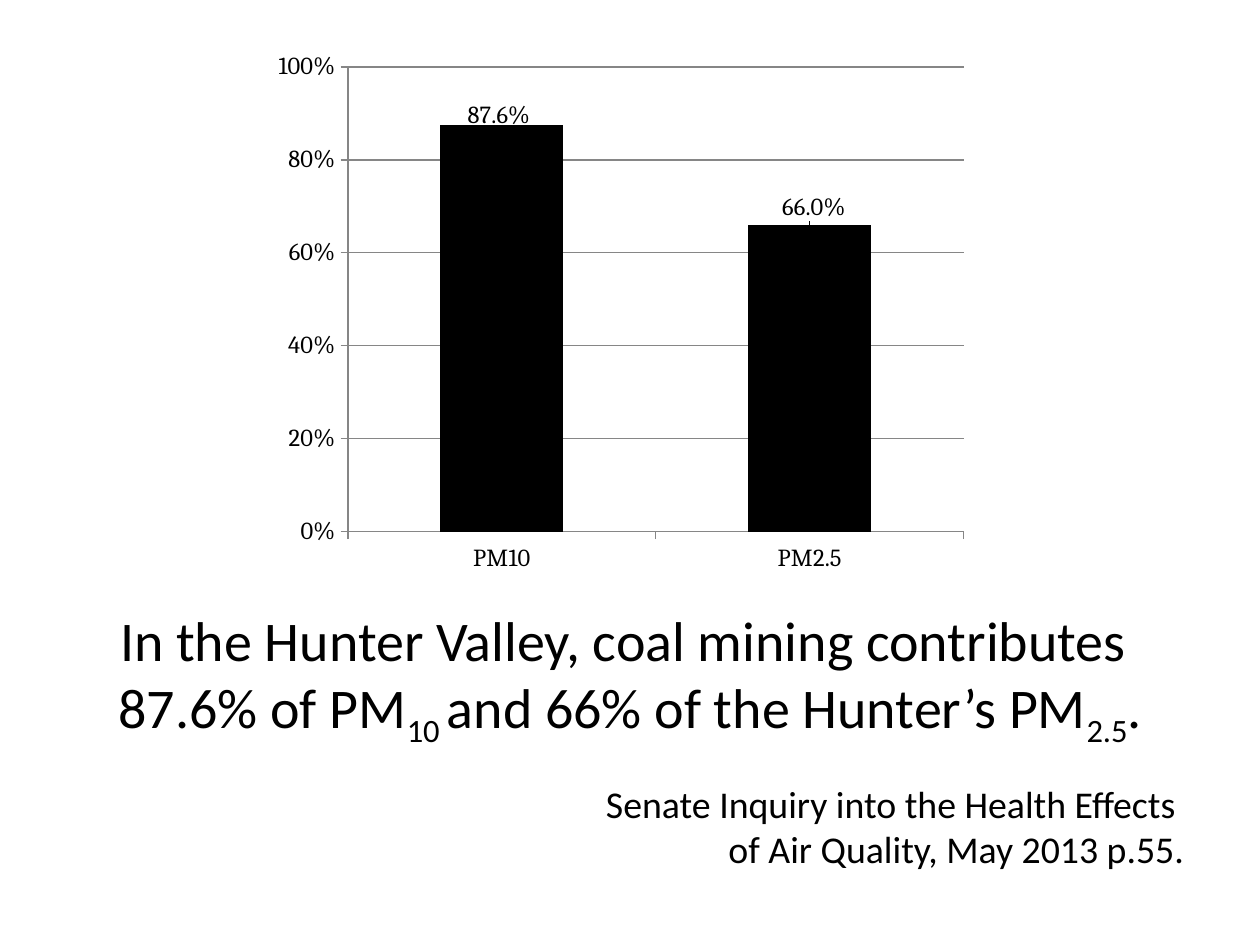
import pptx
import pptx.chart.data
import pptx.dml.color
import pptx.enum.chart
import pptx.enum.text
import pptx.oxml
import pptx.oxml.ns
import pptx.util

COLORS = {"ink": "000000", "axis": "868686", "paper": "FFFFFF"}
FONTS = {"body": "Calibri", "chart": "Cambria"}
SHARES = {"PM10": 0.876, "PM2.5": 0.66}
LABEL_OFFSETS = [(-0.004, -0.393), (0.006, -0.316)]
CLAIM = [
    ["In the Hunter Valley, coal mining contributes "],
    ["87.6% of PM", ("10 ",), "and 66% of the Hunter’s PM", ("2.5",), "."],
]
CITATION = [
    ["Senate Inquiry into the Health Effects "],
    ["of Air Quality, May 2013 p.55."],
]


class SlideBuilder:
    """Hold the style and the current slide, and add its elements."""

    def __init__(self, deck):
        self.slide = deck.slides.add_slide(deck.slide_layouts[1])
        background = self.slide.background.fill
        background.solid()
        background.fore_color.rgb = self.color("paper")
        title = self.slide.shapes.title.element
        title.getparent().remove(title)

    def color(self, name):
        return pptx.dml.color.RGBColor.from_string(COLORS[name])

    def style(self, font, face, size):
        font.name = FONTS[face]
        font.size = pptx.util.Pt(size)
        font.color.rgb = self.color("ink")

    def body(self, left, top, width, height):
        body = self.slide.placeholders[1]
        body.left, body.top = pptx.util.Cm(left), pptx.util.Cm(top)
        body.width, body.height = pptx.util.Cm(width), pptx.util.Cm(height)
        body.text_frame.auto_size = pptx.enum.text.MSO_AUTO_SIZE.NONE
        return body.text_frame

    def paragraph(self, paragraph, lines, size, align, before):
        paragraph.alignment = align
        paragraph.space_before = pptx.util.Pt(before)
        properties = paragraph._p.get_or_add_pPr()
        properties.set("marL", "0")
        properties.set("indent", "0")
        properties.append(pptx.oxml.parse_xml(
            f"<a:buNone {pptx.oxml.ns.nsdecls('a')}/>"))
        for number, pieces in enumerate(lines):
            if number:
                paragraph.add_line_break()
            for piece in pieces:
                run = paragraph.add_run()
                self.style(run.font, "body", size)
                if isinstance(piece, tuple):
                    run.text = piece[0]
                    run._r.get_or_add_rPr().set("baseline", "-25000")
                else:
                    run.text = piece

    def layout(self, modes, **sizes):
        parts = [f'<c:{name} val="{value}"/>'
                 for name, value in (modes | sizes).items()]
        return pptx.oxml.parse_xml(
            f"<c:layout {pptx.oxml.ns.nsdecls('c')}><c:manualLayout>"
            f"{''.join(parts)}</c:manualLayout></c:layout>")

    def column_chart(self, left, top, width, height, shares):
        data = pptx.chart.data.CategoryChartData(number_format="0.0%")
        data.categories = list(shares)
        data.add_series("Series 1", list(shares.values()))
        chart = self.slide.shapes.add_chart(
            pptx.enum.chart.XL_CHART_TYPE.COLUMN_STACKED,
            *map(pptx.util.Cm, (left, top, width, height)), data).chart
        chart.has_legend = False
        chart.has_title = False
        self.style(chart.font, "chart", 14)

        plot = chart.plots[0]
        plot.gap_width, plot.overlap = 150, 100
        plot.vary_by_categories = False
        columns = plot.series[0]
        columns.format.fill.solid()
        columns.format.fill.fore_color.rgb = self.color("ink")
        self.axes(chart)
        self.labels(columns)

        area = chart.element.xpath(".//c:plotArea")[0]
        for automatic in area.xpath("./c:layout"):
            area.remove(automatic)
        area.insert(0, self.layout(
            {"layoutTarget": "inner", "xMode": "edge", "yMode": "edge"},
            x=0.117, y=0.045, w=0.862, h=0.858))

    def axes(self, chart):
        shares_axis = chart.value_axis
        shares_axis.minimum_scale, shares_axis.maximum_scale = 0, 1
        shares_axis.major_unit = 0.2
        shares_axis.has_major_gridlines = True
        shares_axis.tick_labels.number_format = "0%"
        shares_axis.tick_labels.number_format_is_linked = False
        for axis in (shares_axis, chart.category_axis):
            axis.major_tick_mark = pptx.enum.chart.XL_TICK_MARK.OUTSIDE
            axis.minor_tick_mark = pptx.enum.chart.XL_TICK_MARK.NONE
        for part in (shares_axis, chart.category_axis,
                     shares_axis.major_gridlines):
            part.format.line.color.rgb = self.color("axis")
            part.format.line.width = pptx.util.Pt(0.75)

    def labels(self, columns):
        columns.data_labels.show_value = True
        columns.data_labels.number_format = "0.0%"
        columns.data_labels.number_format_is_linked = False
        for number, _ in enumerate(LABEL_OFFSETS):
            label = columns.points[number].data_label
            self.style(label.font, "chart", 14)
            label.position = pptx.enum.chart.XL_LABEL_POSITION.CENTER
        label_elements = columns.data_labels._element.xpath("./c:dLbl")
        for element, (x, y) in zip(label_elements, LABEL_OFFSETS):
            element.insert(1, self.layout({}, x=x, y=y))


def main():
    deck = pptx.Presentation()
    deck.slide_width, deck.slide_height = pptx.util.Cm(25.4), pptx.util.Cm(19.05)
    builder = SlideBuilder(deck)
    text = builder.body(1.27, 12.07, 22.86, 5.84)
    align = pptx.enum.text.PP_ALIGN
    builder.paragraph(text.paragraphs[0], CLAIM, 32, align.CENTER, 6.4)
    builder.paragraph(text.add_paragraph(), CITATION, 21.6, align.RIGHT, 18)
    builder.column_chart(5.33, 0.86, 14.4, 10.92, SHARES)
    deck.save("out.pptx")


if __name__ == "__main__":
    main()
